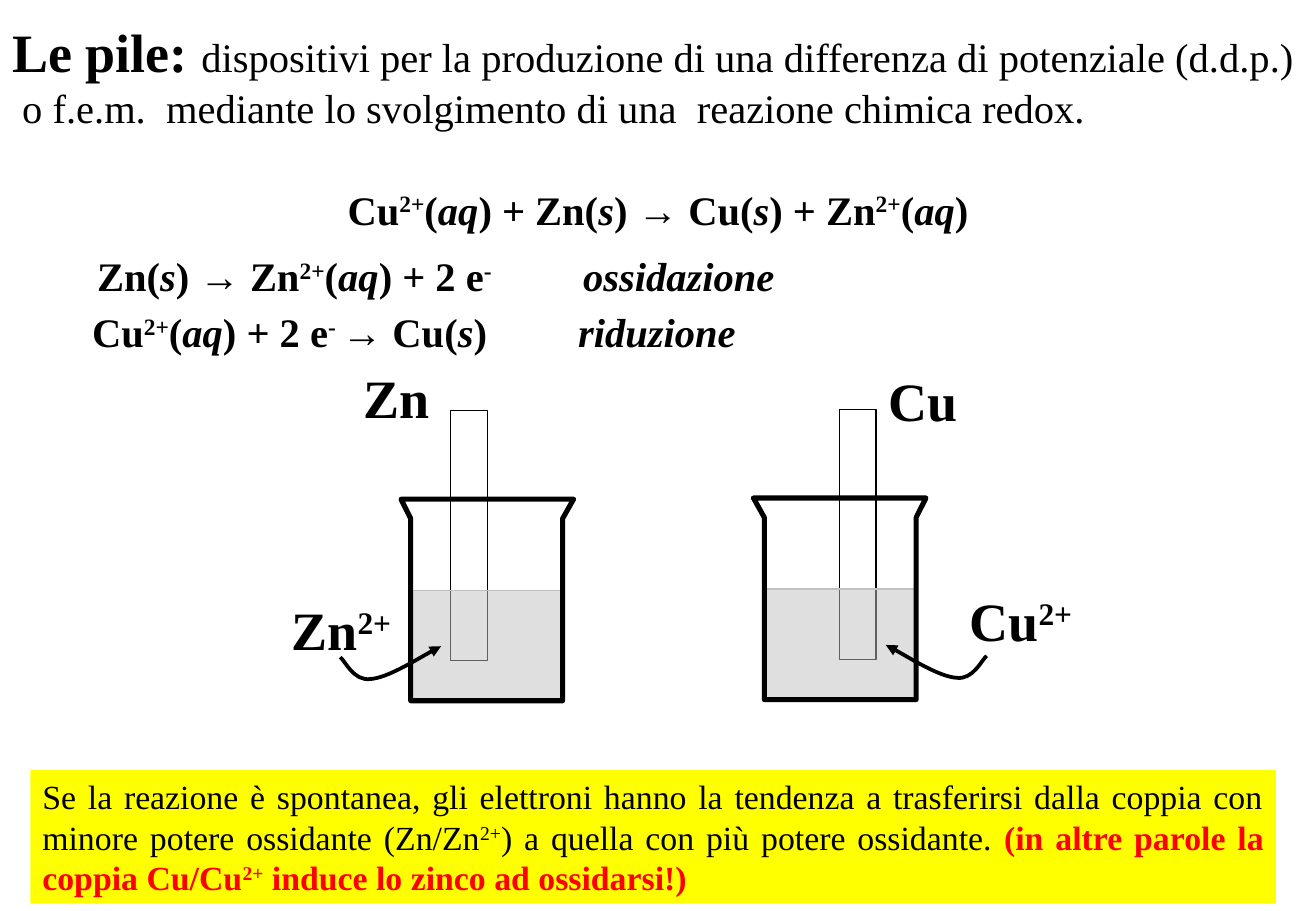
from lxml import etree
from pptx import Presentation
from pptx.dml.color import RGBColor
from pptx.enum.shapes import MSO_SHAPE as SHAPE
from pptx.enum.text import MSO_ANCHOR as ANCHOR, MSO_AUTO_SIZE as AUTO, PP_ALIGN as ALIGN
from pptx.oxml.ns import qn
from pptx.util import Pt

PX = 9144
MIRROR = 1092
FONT = "Times New Roman"
BLACK = RGBColor(0, 0, 0)
WHITE = RGBColor(0xFF, 0xFF, 0xFF)
GREY = RGBColor(0xC0, 0xC0, 0xC0)
YELLOW = RGBColor(0xFF, 0xFF, 0)
RED = RGBColor(0xFF, 0, 0)


class Sheet:
    """Draws styled elements on one slide; in text, ^ marks superscript and _ italics."""

    def __init__(self, prs):
        self.slide = prs.slides.add_slide(prs.slide_layouts[5])
        self.shapes = self.slide.shapes

    def span(self, p, text, size, bold=True, color=BLACK):
        for i, level in enumerate(text.split("^")):
            for j, part in enumerate(level.split("_")):
                if not part:
                    continue
                r = p.add_run()
                r.text = part
                f = r.font
                f.name, f.size, f.bold, f.italic = FONT, Pt(size), bold, j % 2 == 1
                f.color.rgb = color
                if i % 2:
                    r._r.get_or_add_rPr().set("baseline", "30000")

    def fill_text(self, sp, paragraphs, align=ALIGN.LEFT, wrap=True):
        tf = sp.text_frame
        tf.word_wrap = wrap
        tf.auto_size = AUTO.NONE
        tf.vertical_anchor = ANCHOR.TOP
        for n, spans in enumerate(paragraphs):
            p = tf.add_paragraph() if n else tf.paragraphs[0]
            p.alignment = align
            for span in spans:
                self.span(p, *span)

    def title(self, x, y, w, h, paragraphs):
        sp = self.shapes.title
        sp.left, sp.top, sp.width, sp.height = x * PX, y * PX, w * PX, h * PX
        self.fill_text(sp, paragraphs)

    def text(self, x, y, w, h, text, size, align=ALIGN.LEFT, wrap=True):
        sp = self.shapes.add_textbox(x * PX, y * PX, w * PX, h * PX)
        self.fill_text(sp, [[(text, size)]], align, wrap)

    def rect(self, x, y, w, h, fill, line=None, alpha=None):
        sp = self.shapes.add_shape(SHAPE.RECTANGLE, x * PX, y * PX, w * PX, h * PX)
        sp.shadow.inherit = False
        sp.fill.solid()
        sp.fill.fore_color.rgb = fill
        if alpha:
            clr = sp._element.spPr.find(qn("a:solidFill"))[0]
            etree.SubElement(clr, qn("a:alpha")).set("val", str(alpha * 1000))
        if line is None:
            sp.line.fill.background()
        else:
            sp.line.color.rgb = line
            sp.line.width = Pt(0.75)
        return sp

    def outline(self, points, width, close=True):
        fb = self.shapes.build_freeform(*points[0], scale=PX)
        fb.add_line_segments(points[1:], close=close)
        sp = fb.convert_to_shape()
        sp.shadow.inherit = False
        sp.fill.background()
        sp.line.color.rgb = BLACK
        sp.line.width = Pt(width)
        return sp

    def curved_arrow(self, points, width):
        sp = self.outline(points, width, close=False)
        segments = list(sp._element.iter(qn("a:lnTo")))
        for i in range(0, len(segments), 3):
            curve = etree.Element(qn("a:cubicBezTo"))
            segments[i].addprevious(curve)
            for seg in segments[i:i + 3]:
                curve.append(seg[0])
                seg.getparent().remove(seg)
        ln = sp._element.spPr.find(qn("a:ln"))
        etree.SubElement(ln, qn("a:tailEnd")).set("type", "triangle")

    def half_cell(self, metal, metal_box, ion_box, mirrored=False):
        def place(points):
            return [(MIRROR - x, y - 1) if mirrored else (x, y) for x, y in points]

        def block(x, y, w, h, *style):
            (x1, top), (x2, _) = place([(x, y), (x + w, y)])
            self.rect(min(x1, x2), top, w, h, *style)

        block(371, 338, 30, 206, WHITE, BLACK)
        block(338, 486, 125, 92, GREY, GREY, 50)
        self.outline(place([(330, 411), (338, 427), (338, 577),
                            (463, 577), (463, 427), (472, 411)]), 3)
        self.text(*metal_box, metal, 32, wrap=False)
        self.text(*ion_box, metal + "^2+^", 32, wrap=False)
        self.curved_arrow(place([(280, 541), (284, 544), (291, 561), (305, 559),
                                 (319, 558), (351, 538), (363, 532)]), 2.25)


def main():
    prs = Presentation()
    prs.slide_width, prs.slide_height = 1083 * PX, 750 * PX
    s = Sheet(prs)
    s.title(0, 10, 1083, 103, [
        [("Le pile: ", 32),
         ("dispositivi per la produzione di una differenza di potenziale (d.d.p.)", 24, False)],
        [(" o f.e.m.  mediante lo svolgimento di una  reazione chimica redox.", 24, False)],
    ])
    s.text(40, 147, 1003, 50, "Cu^2+^(_aq_) + Zn(_s_) → Cu(_s_) + Zn^2+^(_aq_)", 24, ALIGN.CENTER)
    s.text(70, 202, 989, 50, "Zn(_s_) → Zn^2+^(_aq_) + 2 e^-\t\t^_ossidazione_", 24)
    s.text(66, 248, 996, 50, "Cu^2+^(_aq_) + 2 e^- ^→ Cu(_s_)\t\t_riduzione_", 24)
    s.half_cell("Zn", (289, 295, 74, 63), (230, 486, 106, 63))
    s.half_cell("Cu", (721, 298, 77, 63), (788, 479, 108, 63), mirrored=True)
    note = s.rect(25, 634, 1025, 110, YELLOW)
    s.fill_text(note, [[
        ("Se la reazione è spontanea, gli elettroni hanno la tendenza a trasferirsi dalla coppia "
         "con minore potere ossidante (Zn/Zn^2+^) a quella con più potere ossidante. ", 20, False),
        ("(in altre parole la coppia Cu/Cu^2+^ induce lo zinco ad ossidarsi!)", 20, True, RED),
    ]], ALIGN.JUSTIFY)
    prs.save("out.pptx")


if __name__ == "__main__":
    main()
